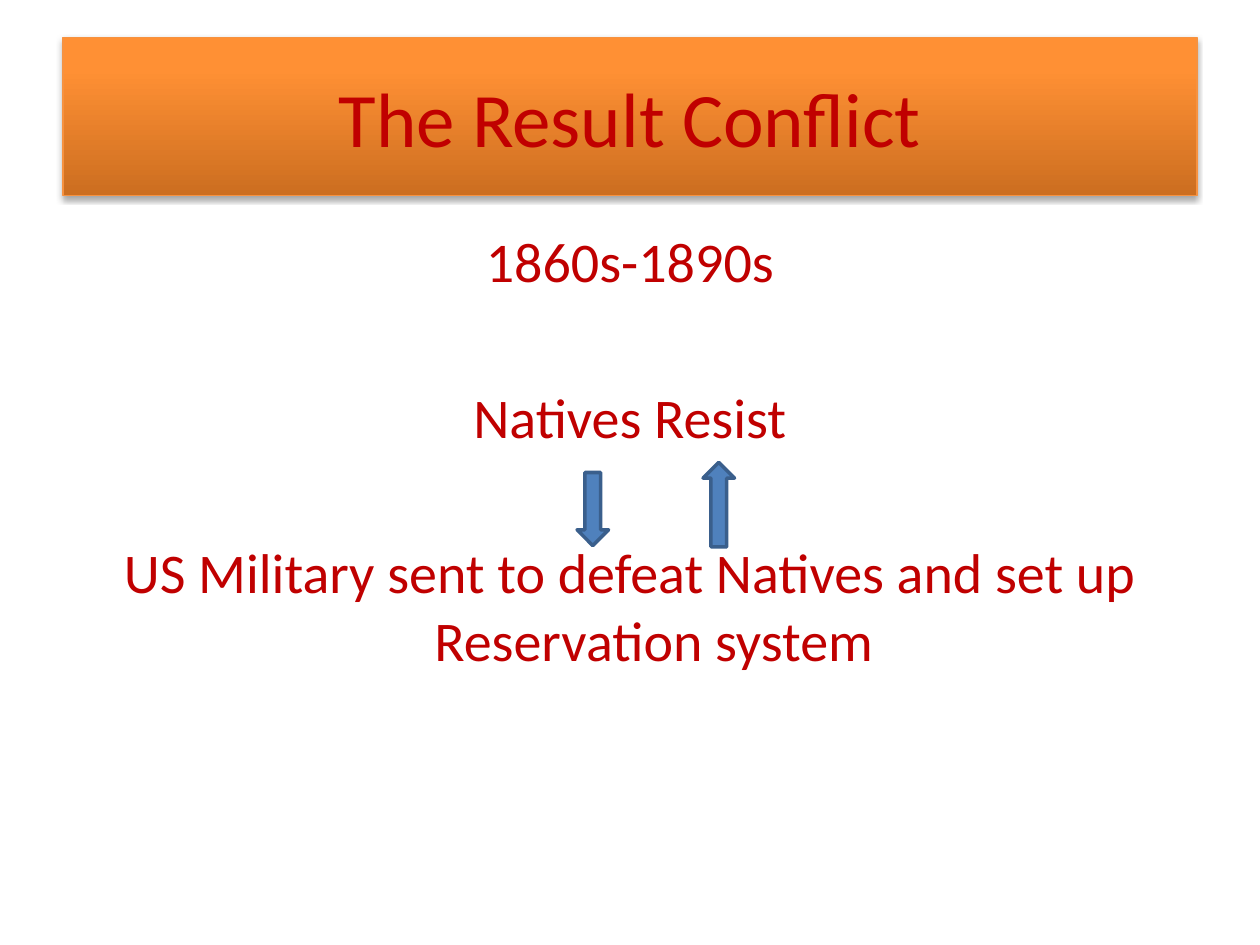
"""Build the slide on the conflict between the Natives and the US military."""
from copy import deepcopy

from lxml import etree
from pptx import Presentation
from pptx import util as u
from pptx.dml.color import RGBColor
from pptx.enum import shapes, text
from pptx.oxml.ns import qn


def color(value):
    return RGBColor.from_string(value)


def write(paragraph, words, size):
    paragraph.text = words
    paragraph.alignment = text.PP_ALIGN.CENTER
    formats = {"name": "Calibri", "size": u.Pt(size)}
    for name, value in formats.items():
        setattr(paragraph.font, name, value)
    paragraph.font.color.rgb = color("C00000")


deck = Presentation()
deck.slide_width, deck.slide_height = u.Inches(10), u.Inches(7.5)
slide = deck.slides.add_slide(deck.slide_layouts[6])

banner = slide.shapes.add_shape(
    shapes.MSO_SHAPE.RECTANGLE, u.Inches(0.5), u.Inches(0.3), u.Inches(9), u.Inches(1.25))
banner.fill.gradient()
banner.fill.gradient_angle = 90
stop_list = banner._element.spPr.find(".//" + qn("a:gsLst"))
stop_list.append(deepcopy(stop_list[-1]))
shades = [(0, "CC6E20"), (0.8, "FF9034"), (1, "FF9136")]
for stop, (position, shade) in zip(banner.fill.gradient_stops, shades):
    stop.position = position
    stop.color.rgb = color(shade)
banner.line.color.rgb = color("F69240")
banner.line.width = u.Pt(0.75)
banner.shadow.inherit = False
effects = banner._element.spPr.find(qn("a:effectLst"))
shadow = etree.SubElement(
    effects, qn("a:outerShdw"), blurRad=str(u.Pt(3.1)), dist=str(u.Pt(1.8)),
    dir="5400000", rotWithShape="0")
black = etree.SubElement(shadow, qn("a:srgbClr"), val="000000")
etree.SubElement(black, qn("a:alpha"), val="35000")
banner.text_frame.word_wrap = True
banner.text_frame.vertical_anchor = text.MSO_ANCHOR.MIDDLE
write(banner.text_frame.paragraphs[0], "The Result Conflict", 44)

story = slide.shapes.add_textbox(
    u.Inches(0.5), u.Inches(1.75), u.Inches(9), u.Inches(4.95)).text_frame
story.word_wrap = True
events = [
    "1860s-1890s",
    "Natives Resist",
    "US Military sent to defeat Natives and set up Reservation system",
]
for index, event in enumerate(events):
    paragraph = story.add_paragraph() if index else story.paragraphs[0]
    indent = paragraph._p.get_or_add_pPr()
    indent.set("marL", str(u.Inches(0.38)))
    indent.set("indent", str(u.Inches(-0.38)))
    write(paragraph, event, 32)
    if index:
        paragraph.space_before = u.Pt(50.5)

arrows = [
    (shapes.MSO_SHAPE.DOWN_ARROW, 4.58, 3.75, 0.58),
    (shapes.MSO_SHAPE.UP_ARROW, 5.58, 3.67, 0.67),
]
for direction, left, top, height in arrows:
    arrow = slide.shapes.add_shape(
        direction, u.Inches(left), u.Inches(top), u.Inches(0.25), u.Inches(height))
    arrow.fill.solid()
    arrow.fill.fore_color.rgb = color("4F81BD")
    arrow.line.color.rgb = color("3A5F8C")
    arrow.line.width = u.Pt(2)
    arrow.shadow.inherit = False

deck.save("out.pptx")
